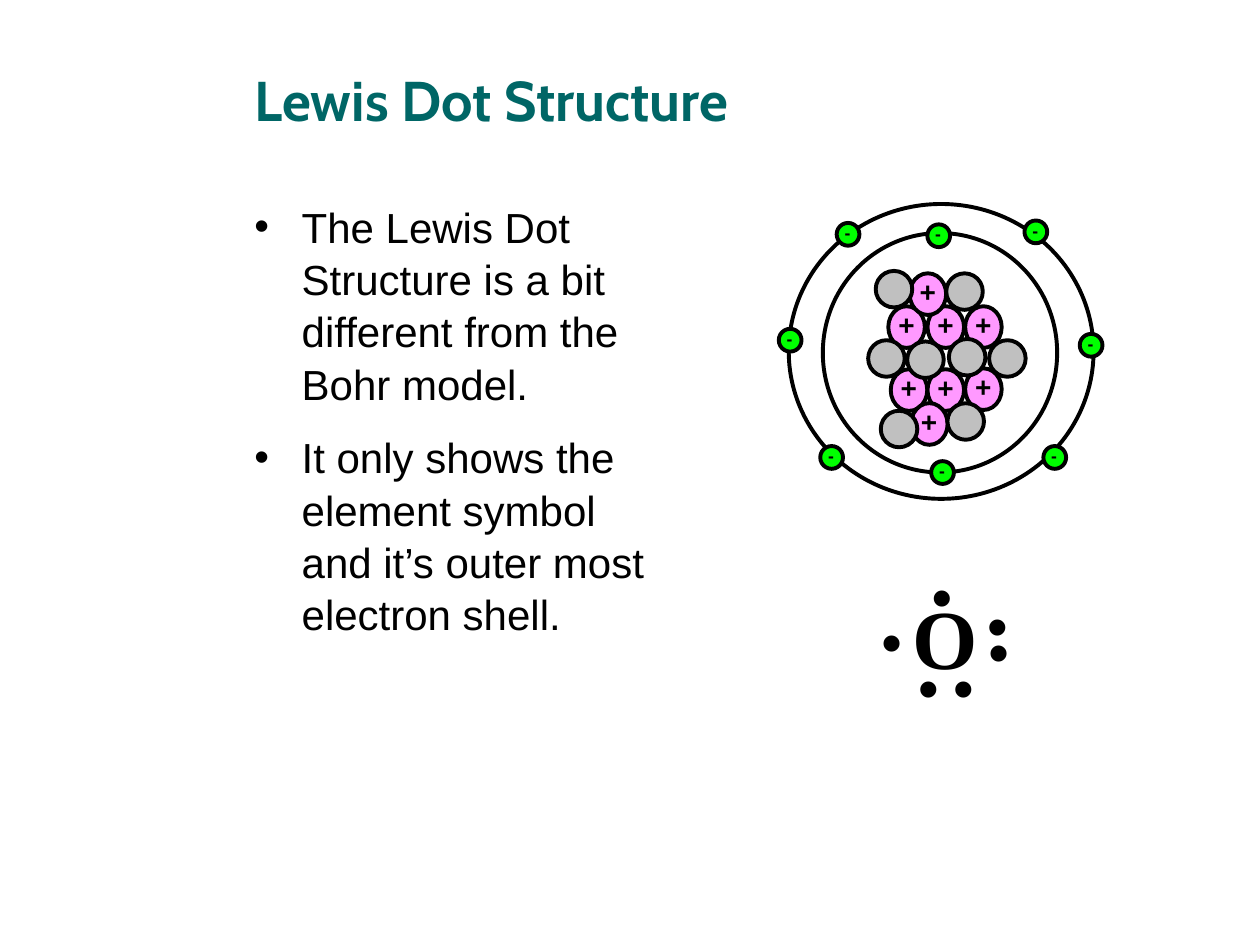
from pptx import Presentation
from pptx.dml.color import RGBColor
from pptx.enum.shapes import MSO_SHAPE
from pptx.enum.text import MSO_ANCHOR, MSO_AUTO_SIZE, PP_ALIGN
from pptx.util import Pt

COLORS = {"title": "006666", "ink": "000000", "proton": "FF99FF",
          "neutron": "C0C0C0", "electron": "00FF00"}

# Left and top of each particle, in points
PROTONS = [(509, 211), (530, 211), (507.6, 175), (530, 175),
           (551.5, 210.5), (551.5, 175), (519.8, 156.2), (520.6, 230.4)]
NEUTRONS = [(540.7, 156.2), (542.2, 193.7), (518.4, 195.1), (500.4, 154.8),
            (541.4, 230.4), (503.3, 234.7), (496.1, 194.4), (565.2, 194.4)]
SHELLS = [(470.2, 133.2, 133.9, 136.8), (450.7, 116.6, 174.2, 168.5)]
ELECTRONS = [(529.9, 128.2), (532.1, 263.5), (478.1, 127.4), (585.4, 126),
             (596.2, 254.9), (468.7, 254.9), (445, 187.9), (617, 190.8)]
LEWIS_DOTS = [(525.6, 324.7, 44), (557.3, 341.3, 25.2),
              (558, 356.4, 25.2), (496.8, 350.6, 25.2)]


class SlideBuilder:
    """Holds the text style and the slide being drawn."""

    font = "Arial"
    line_width = 2.25

    def __init__(self, presentation):
        self.slide = presentation.slides.add_slide(presentation.slide_layouts[1])
        self.atom = self.slide.shapes.add_group_shape()

    def style(self, paragraph, size, color="ink", bold=False, font=None):
        for run in paragraph.runs:
            run.font.name = font or self.font
            run.font.size = Pt(size)
            run.font.bold = bold
            run.font.color.rgb = RGBColor.from_string(COLORS[color])

    def place(self, shape, left, top, width, height):
        shape.left, shape.top = Pt(left), Pt(top)
        shape.width, shape.height = Pt(width), Pt(height)

    def title(self, text, *box):
        title = self.slide.shapes.title
        self.place(title, *box)
        title.text_frame.text = text
        title.text_frame.vertical_anchor = MSO_ANCHOR.MIDDLE
        paragraph = title.text_frame.paragraphs[0]
        paragraph.alignment = PP_ALIGN.LEFT
        self.style(paragraph, 32, "title", True, "Cabin")

    def bullets(self, items, *box):
        body = self.slide.placeholders[1]
        self.place(body, *box)
        frame = body.text_frame
        frame.auto_size = MSO_AUTO_SIZE.NONE
        frame.text = "\n".join(items)
        for index, paragraph in enumerate(frame.paragraphs):
            properties = paragraph._p.get_or_add_pPr()
            properties.set("marL", str(Pt(27)))
            properties.set("indent", str(-Pt(27)))
            paragraph.line_spacing = 1.04
            paragraph.space_before = Pt(12 if index else 0)
            self.style(paragraph, 24)

    def label(self, text, size, left, top, width, height,
              font=None, inset=7.2, shapes=None):
        shapes = shapes or self.slide.shapes
        box = shapes.add_textbox(Pt(left), Pt(top), Pt(width), Pt(height))
        frame = box.text_frame
        frame.word_wrap = True
        frame.margin_left = frame.margin_right = Pt(inset)
        frame.margin_top = Pt(min(inset, 3.6))
        frame.text = text
        paragraph = frame.paragraphs[0]
        paragraph.line_spacing = 0.8
        self.style(paragraph, size, bold=True, font=font)

    def ellipse(self, left, top, width, height, color=None):
        shape = self.atom.shapes.add_shape(
            MSO_SHAPE.OVAL, Pt(left), Pt(top), Pt(width), Pt(height))
        shape.shadow.inherit = False
        if color:
            shape.fill.solid()
            shape.fill.fore_color.rgb = RGBColor.from_string(COLORS[color])
        else:
            shape.fill.background()
        shape.line.color.rgb = RGBColor.from_string(COLORS["ink"])
        shape.line.width = Pt(self.line_width)

    def proton(self, left, top):
        self.ellipse(left, top, 20.9, 23.8, "proton")
        self.label("+", 16, left - 1.4, top + 0.7, 23, 22.3,
                   shapes=self.atom.shapes)

    def electron(self, left, top):
        self.ellipse(left, top, 13, 13, "electron")
        self.label("-", 10, left - 2.6, top - 1.7, 20.2, 16.6,
                   shapes=self.atom.shapes)


def main():
    presentation = Presentation()
    presentation.slide_width, presentation.slide_height = Pt(720), Pt(540)
    builder = SlideBuilder(presentation)

    builder.title("Lewis Dot Structure", 138.2, 23.8, 552.2, 66.2)
    builder.bullets(
        ["The Lewis Dot Structure is a bit different from the Bohr model.",
         "It only shows the element symbol and it’s outer most electron shell."],
        138.2, 110.2, 244.1, 360)

    builder.label("O", 48, 514.1, 342, 62, 53.3, font="Times New Roman")
    for left, top, width in LEWIS_DOTS:
        builder.label("•", 32, left, top, width, 38.2)
    builder.label("• •", 32, 524.9, 380.2, 67, 34.6, inset=0)

    for position in PROTONS:
        builder.proton(*position)
    for position in NEUTRONS:
        builder.ellipse(*position, 20.9, 20.9, "neutron")
    for shell in SHELLS:
        builder.ellipse(*shell)
    for position in ELECTRONS:
        builder.electron(*position)

    presentation.save("out.pptx")


if __name__ == "__main__":
    main()
